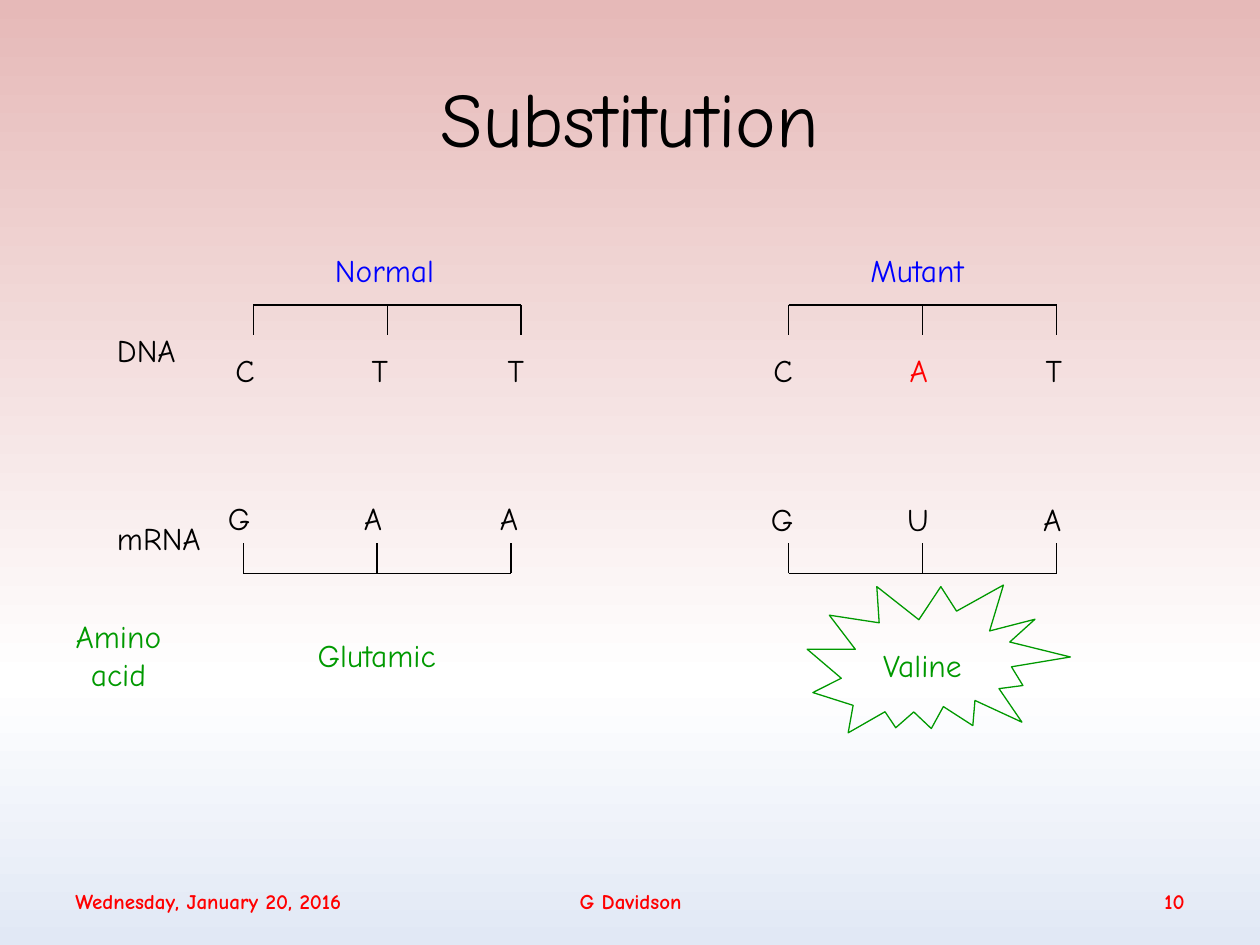
from copy import deepcopy
from dataclasses import dataclass

from lxml import etree
from pptx import Presentation
from pptx.dml.color import RGBColor
from pptx.enum.shapes import MSO_CONNECTOR, MSO_SHAPE
from pptx.enum.text import MSO_ANCHOR, PP_ALIGN
from pptx.oxml.ns import qn
from pptx.util import Inches, Pt

LEFT, CENTER, RIGHT = PP_ALIGN.LEFT, PP_ALIGN.CENTER, PP_ALIGN.RIGHT
TOP, MIDDLE = MSO_ANCHOR.TOP, MSO_ANCHOR.MIDDLE
STRAIGHT = MSO_CONNECTOR.STRAIGHT
BURST = MSO_SHAPE.EXPLOSION2

# Grid of 100 columns by 75 rows
CELL = Inches(0.1)
COLUMNS, ROWS = 100, 75
FONT = "Comic Neue"
BLACK, RED, BLUE, GREEN = "000000", "FF0000", "0000FF", "009900"
BACKGROUND = [(0, "E6B9B8"), (0.72, "FFFFFF"), (1, "E1E8F5")]

BASE_GAP = 10.8
PRONG_GAP, PRONG_LENGTH = 10.63, 2.4
DNA_BAR, MRNA_BAR = 24.2, 45.5


@dataclass
class Label:
    text: str
    left: float
    top: float
    width: float
    height: float = 4
    color: str = BLACK
    align: PP_ALIGN = LEFT
    size: int = 18
    bold: bool = False
    anchor: MSO_ANCHOR = TOP


@dataclass
class Codon:
    bases: str
    left: float
    top: float
    bracket_left: float
    bar: float
    prong_direction: int
    mutated: str = ""


TITLE = Label("Substitution", 5, 3, 90, 12.5, align=CENTER, size=44, anchor=MIDDLE)
FOOTER = {"color": RED, "size": 12, "bold": True, "anchor": MIDDLE}
LABELS = [
    Label("Wednesday, January 20, 2016", 5, 69.5, 33.2, **FOOTER),
    Label("G Davidson", 34.2, 69.5, 31.7, align=CENTER, **FOOTER),
    Label("10", 71.7, 69.5, 23.3, align=RIGHT, **FOOTER),
    Label("Normal", 25.6, 19.4, 21.3, color=BLUE),
    Label("Mutant", 68.1, 19.4, 21.3, color=BLUE),
    Label("DNA", 8.3, 25.8, 10.2),
    Label("mRNA", 8.3, 40.7, 10.2),
    Label("Amino acid", 4.3, 48.5, 10.2, 7, color=GREEN, align=CENTER),
    Label("Glutamic", 23.2, 50, 13.4, color=GREEN, align=CENTER),
    Label("Valine", 68.1, 50.8, 10.2, color=GREEN, align=CENTER),
]
CODONS = [
    Codon("CTT", 17.7, 27.4, 20.1, DNA_BAR, 1),
    Codon("CAT", 60.4, 27.4, 62.6, DNA_BAR, 1, mutated="A"),
    Codon("GAA", 17.1, 39.1, 19.3, MRNA_BAR, -1),
    Codon("GUA", 60.2, 39.2, 62.6, MRNA_BAR, -1),
]


def cells(*lengths: float) -> list[int]:
    return [round(length * CELL) for length in lengths]


def rgb(color: str) -> RGBColor:
    return RGBColor.from_string(color)


def add_run(paragraph, text: str, color: str, size: int = 18, bold: bool = False) -> None:
    run = paragraph.add_run()
    run.text = text
    for name, value in {"name": FONT, "size": Pt(size), "bold": bold}.items():
        setattr(run.font, name, value)
    run.font.color.rgb = rgb(color)


def write_label(shape, label: Label) -> None:
    place = cells(label.left, label.top, label.width, label.height)
    for name, value in zip(("left", "top", "width", "height"), place):
        setattr(shape, name, value)
    frame = shape.text_frame
    frame.word_wrap = True
    frame.vertical_anchor = label.anchor
    paragraph = frame.paragraphs[0]
    paragraph.alignment = label.align
    add_run(paragraph, label.text, label.color, label.size, label.bold)


def add_line(slide, start: tuple[float, float], end: tuple[float, float]) -> None:
    line = slide.shapes.add_connector(STRAIGHT, *cells(*start, *end))
    line.line.color.rgb = rgb(BLACK)
    line.line.width = Pt(0.75)
    etree.SubElement(line.element.spPr, qn("a:effectLst"))


def add_codon(slide, codon: Codon) -> None:
    # Bases, spread by tab stops
    box = slide.shapes.add_textbox(*cells(codon.left, codon.top, 29.1, 4))
    box.text_frame.word_wrap = True
    paragraph = box.text_frame.paragraphs[0]
    paragraph.alignment = LEFT
    stops = etree.SubElement(paragraph.runs and None or paragraph._p.get_or_add_pPr(), qn("a:tabLst"))
    for index, base in enumerate(codon.bases):
        if index:
            position = cells(index * BASE_GAP)[0]
            etree.SubElement(stops, qn("a:tab"), pos=str(position), algn="l")
            add_run(paragraph, "\t", BLACK)
        add_run(paragraph, base, RED if base == codon.mutated else BLACK)

    # Bracket with a prong for each base
    prongs = [codon.bracket_left + i * PRONG_GAP for i in range(len(codon.bases))]
    add_line(slide, (prongs[0], codon.bar), (prongs[-1], codon.bar))
    for x in prongs:
        add_line(slide, (x, codon.bar), (x, codon.bar + codon.prong_direction * PRONG_LENGTH))


def add_burst(slide) -> None:
    burst = slide.shapes.add_shape(BURST, *cells(64.1, 45.4, 20.5, 14.2))
    burst.rotation = 13
    burst.shadow.inherit = False
    burst.fill.background()
    burst.line.color.rgb = rgb(GREEN)
    burst.line.width = Pt(0.75)


def paint_background(slide) -> None:
    fill = slide.background.fill
    fill.gradient()
    fill.gradient_angle = 270
    stop_list = slide.element.xpath(".//p:bg//a:gsLst")[0]
    stop_list.append(deepcopy(stop_list[-1]))
    for stop, (position, color) in zip(fill.gradient_stops, BACKGROUND):
        stop.position = position
        stop.color.rgb = rgb(color)


def main() -> None:
    deck = Presentation()
    deck.slide_width, deck.slide_height = cells(COLUMNS, ROWS)
    slide = deck.slides.add_slide(deck.slide_layouts[5])
    paint_background(slide)
    write_label(slide.shapes.title, TITLE)
    for codon in CODONS:
        add_codon(slide, codon)
    add_burst(slide)
    for label in LABELS:
        write_label(slide.shapes.add_textbox(0, 0, CELL, CELL), label)
    deck.save("out.pptx")


if __name__ == "__main__":
    main()
